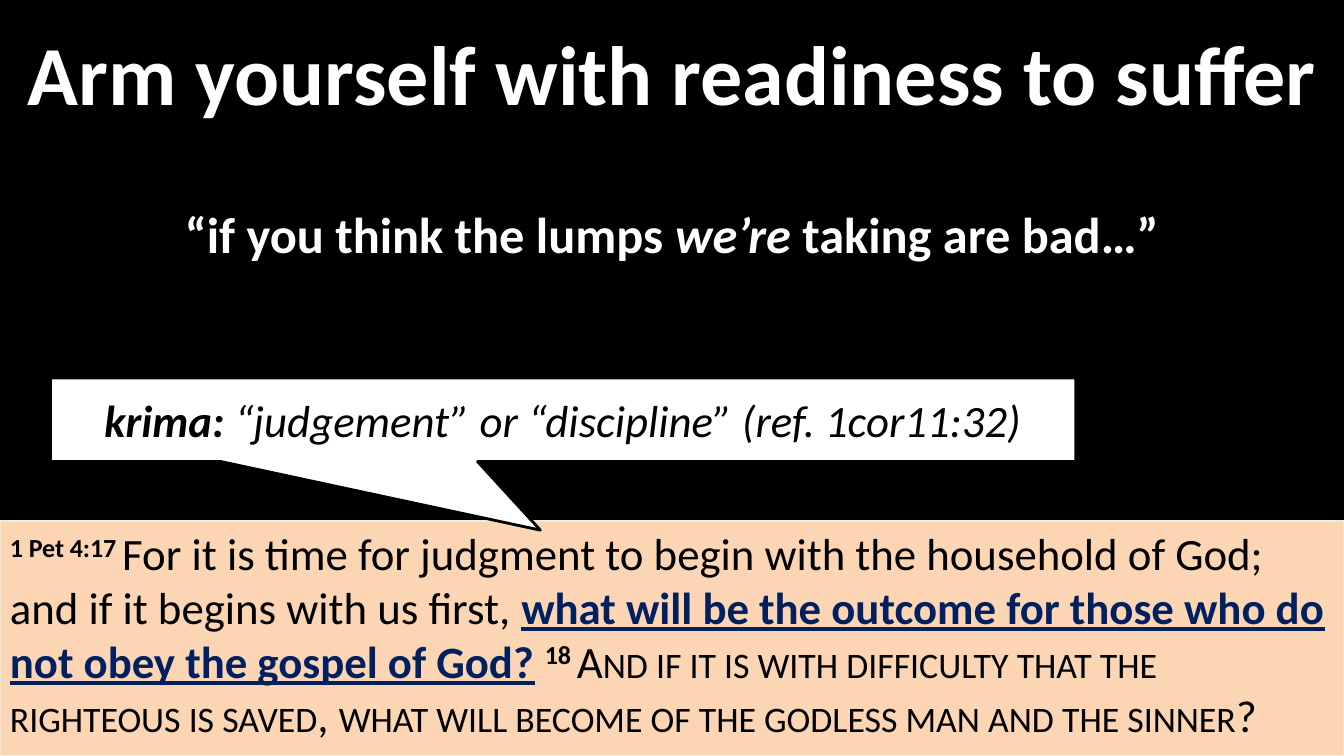
from copy import deepcopy
from dataclasses import dataclass

from pptx import Presentation
from pptx import util as u
from pptx.dml.color import RGBColor
from pptx.enum import shapes, text

PX = 9144  # EMU per px, 100 px to the inch
BLACK = RGBColor(0x00, 0x00, 0x00)
WHITE = RGBColor(0xFF, 0xFF, 0xFF)
NAVY = RGBColor(0x00, 0x20, 0x60)
PEACH = RGBColor(0xFC, 0xD5, 0xB5)
IVORY = RGBColor(0xEE, 0xEC, 0xE1)


@dataclass(frozen=True)
class Span:
    text: str
    color: RGBColor = BLACK
    bold: bool = False
    italic: bool = False
    underline: bool = False
    raised: bool = False
    small_caps: bool = False


@dataclass(frozen=True)
class Box:
    left: int
    top: int
    width: int
    height: int


def write(sp, spans: list[Span], size: int, align, anchor) -> None:
    tf = sp.text_frame
    tf.word_wrap = True
    tf.auto_size = text.MSO_AUTO_SIZE.NONE
    tf.vertical_anchor = anchor
    p = tf.paragraphs[0]
    p.alignment = align
    for span in spans:
        r = p.add_run()
        r.text = span.text
        r.font.name = "Calibri"
        r.font.size = u.Pt(size)
        r.font.color.rgb = span.color
        r.font.bold = span.bold
        r.font.italic = span.italic
        r.font.underline = span.underline
        if span.raised:
            r.font._element.set("baseline", "30000")
        if span.small_caps:
            r.font._element.set("cap", "small")


def place(sp, box: Box) -> None:
    sp.left, sp.top = box.left * PX, box.top * PX
    sp.width, sp.height = box.width * PX, box.height * PX


def add_shape(slide, kind, box: Box):
    sp = slide.shapes.add_shape(kind, 0, 0, 0, 0)
    place(sp, box)
    sp.shadow.inherit = False
    return sp


def add_panel(slide, kind, box: Box, fill: RGBColor, line: RGBColor, weight: float):
    sp = add_shape(slide, kind, box)
    sp.fill.solid()
    sp.fill.fore_color.rgb = fill
    sp.line.color.rgb = line
    sp.line.width = u.Pt(weight)
    return sp


def point_at(sp, box: Box, x: int, y: int) -> None:
    sp.adjustments[0] = (x - box.left) / box.width - 0.5
    sp.adjustments[1] = (y - box.top) / box.height - 0.5


def main() -> None:
    prs = Presentation()
    prs.slide_width, prs.slide_height = 1333 * PX, 750 * PX
    slide = prs.slides.add_slide(prs.slide_layouts[5])
    slide.background.fill.solid()
    slide.background.fill.fore_color.rgb = BLACK
    center, left = text.PP_ALIGN.CENTER, text.PP_ALIGN.LEFT
    middle, top = text.MSO_ANCHOR.MIDDLE, text.MSO_ANCHOR.TOP

    # Quote, in a callout without fill or line
    quote = add_shape(slide, shapes.MSO_SHAPE.ROUNDED_RECTANGULAR_CALLOUT,
                      Box(125, 190, 1083, 83))
    quote.fill.background()
    quote.line.fill.background()
    quote.adjustments[0], quote.adjustments[1] = -0.22, 0.5
    write(quote, [
        Span("“if you think the lumps ", WHITE, bold=True),
        Span("we’re", WHITE, bold=True, italic=True),
        Span(" taking are bad…”", WHITE, bold=True),
    ], 36, center, middle)

    # Title, with the same outline as the quote
    title = slide.shapes.title
    place(title, Box(0, 29, 1333, 84))
    title._element.spPr.append(deepcopy(quote._element.spPr.prstGeom))
    write(title, [Span("Arm yourself with readiness to suffer", WHITE, bold=True)],
          60, center, middle)

    # Scripture
    scripture = add_panel(slide, shapes.MSO_SHAPE.RECTANGLE,
                          Box(0, 517, 1333, 233), PEACH, IVORY, 1.5)
    write(scripture, [
        Span("1 Pet 4:17 ", bold=True, raised=True),
        Span("For it is time for judgment to begin with the household of God; "
             "and if it begins with us first, "),
        Span("what will be the outcome for those who do not obey the gospel of God?",
             NAVY, bold=True, underline=True),
        Span(" "),
        Span("18 ", bold=True, raised=True),
        Span("And if it is with difficulty that the righteous is saved", small_caps=True),
        Span(", "),
        Span("what will become of the godless man and the sinner", small_caps=True),
        Span("?"),
    ], 32, left, top)

    # Word note pointing at "judgment"
    note_box = Box(50, 375, 1017, 83)
    note = add_panel(slide, shapes.MSO_SHAPE.RECTANGULAR_CALLOUT,
                     note_box, WHITE, BLACK, 2)
    point_at(note, note_box, 536, 526)
    write(note, [
        Span("krima: ", bold=True, italic=True),
        Span("“judgement” or “discipline” (ref. 1cor11:32)", italic=True),
    ], 32, center, middle)

    prs.save("out.pptx")


if __name__ == "__main__":
    main()
